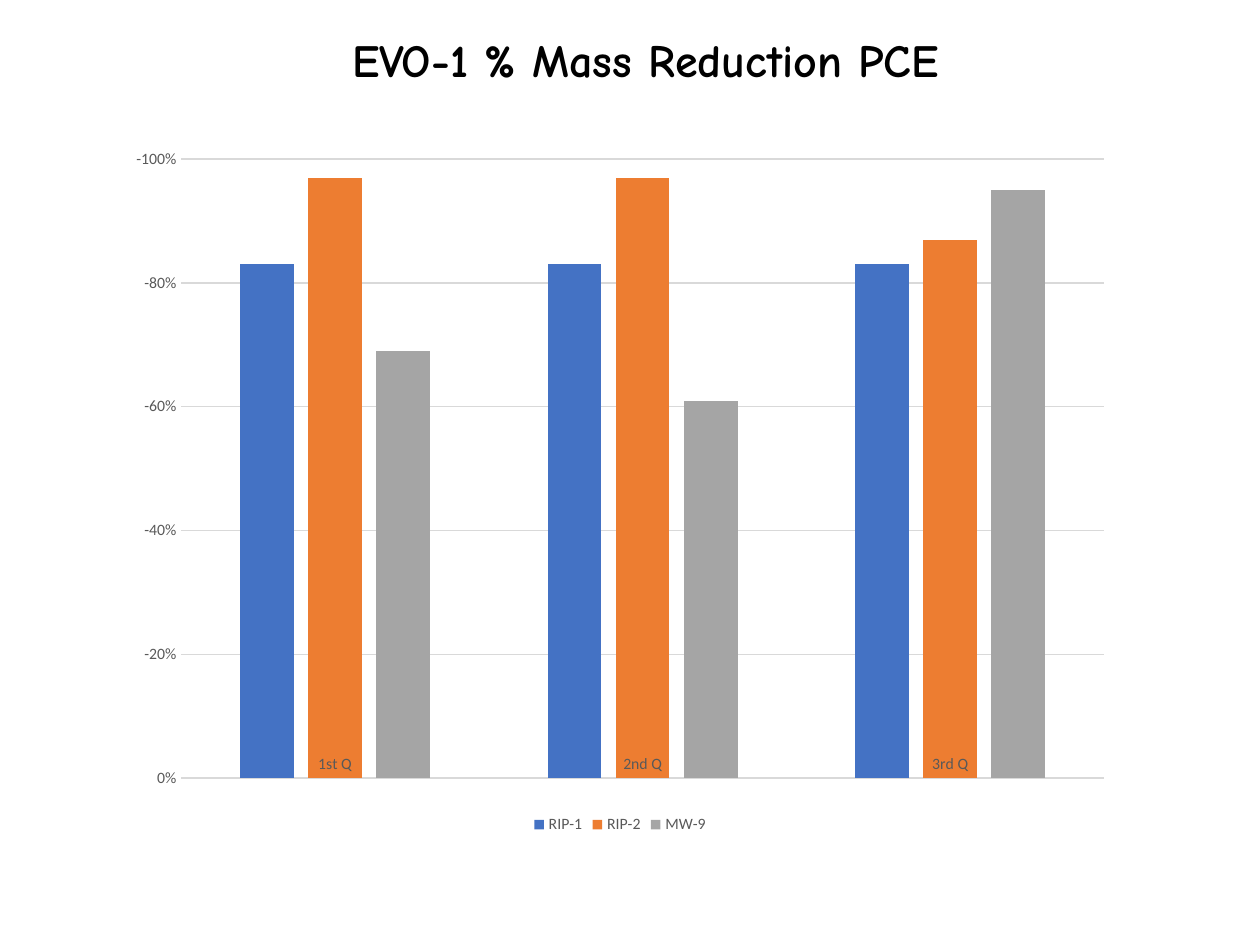
import pptx
import pptx.chart.data
import pptx.dml.color
import pptx.enum.chart
import pptx.enum.text
import pptx.util

Cm = pptx.util.Cm
Pt = pptx.util.Pt
RGBColor = pptx.dml.color.RGBColor
XL = pptx.enum.chart

BLACK = RGBColor(0x00, 0x00, 0x00)
GRAY = RGBColor(0x59, 0x59, 0x59)
PALE = RGBColor(0xD9, 0xD9, 0xD9)
BLUE = RGBColor(0x44, 0x72, 0xC4)
ORANGE = RGBColor(0xED, 0x7D, 0x31)
SILVER = RGBColor(0xA5, 0xA5, 0xA5)

WELLS = {
    "RIP-1": (BLUE, (-0.83, -0.83, -0.83)),
    "RIP-2": (ORANGE, (-0.97, -0.97, -0.87)),
    "MW-9": (SILVER, (-0.69, -0.61, -0.95)),
}


def apply(item, **values):
    """Set each named attribute of item."""
    for name, value in values.items():
        setattr(item, name, value)


def style(font, size, color, face="Calibri", bold=False):
    apply(font, size=Pt(size), name=face, bold=bold)
    font.color.rgb = color


def rule(line):
    """Give a line the thin pale look of the grid."""
    line.width = Pt(0.75)
    line.color.rgb = PALE


def add_title(slide, box):
    frame = slide.shapes.add_textbox(*box).text_frame
    apply(frame, word_wrap=True, vertical_anchor=pptx.enum.text.MSO_ANCHOR.TOP)
    para = frame.paragraphs[0]
    apply(para, alignment=pptx.enum.text.PP_ALIGN.CENTER, line_spacing=0.9)
    run = para.add_run()
    run.text = "EVO-1 % Mass Reduction PCE"
    style(run.font, 26.3, BLACK, "Comic Neue", True)


def add_bars(slide, box):
    data = pptx.chart.data.CategoryChartData(number_format="0%")
    data.categories = ["1st Q", "2nd Q", "3rd Q"]
    for name, (color, values) in WELLS.items():
        data.add_series(name, values)
    kind = XL.XL_CHART_TYPE.COLUMN_CLUSTERED
    chart = slide.shapes.add_chart(kind, *box, data).chart
    apply(chart, has_title=False, has_legend=True)
    style(chart.font, 10, BLACK)

    apply(chart.legend, position=XL.XL_LEGEND_POSITION.BOTTOM,
          include_in_layout=False)
    style(chart.legend.font, 9, GRAY)

    plot = chart.plots[0]
    apply(plot, gap_width=219, overlap=-27, vary_by_categories=False)
    for bar in plot.series:
        bar.invert_if_negative = False
        bar.format.fill.solid()
        bar.format.fill.fore_color.rgb = WELLS[bar.name][0]

    cats, vals = chart.category_axis, chart.value_axis
    for axis in (cats, vals):
        apply(axis, major_tick_mark=XL.XL_TICK_MARK.NONE,
              minor_tick_mark=XL.XL_TICK_MARK.NONE)
        style(axis.tick_labels.font, 9, GRAY)
    cats.has_major_gridlines = False
    rule(cats.format.line)
    apply(vals, minimum_scale=-1, maximum_scale=0, major_unit=0.2,
          reverse_order=True, has_major_gridlines=True)
    apply(vals.tick_labels, number_format="0%", number_format_is_linked=False)
    vals.format.line.fill.background()
    rule(vals.major_gridlines.format.line)


def main():
    deck = pptx.Presentation()
    apply(deck, slide_width=Cm(25.4), slide_height=Cm(19.05))
    slide = deck.slides.add_slide(deck.slide_layouts[6])
    add_bars(slide, (Cm(2.34), Cm(2.74), Cm(20.32), Cm(14.17)))
    add_title(slide, (Cm(1.07), Cm(0.64), Cm(23.88), Cm(2.77)))
    deck.save("out.pptx")


if __name__ == "__main__":
    main()
